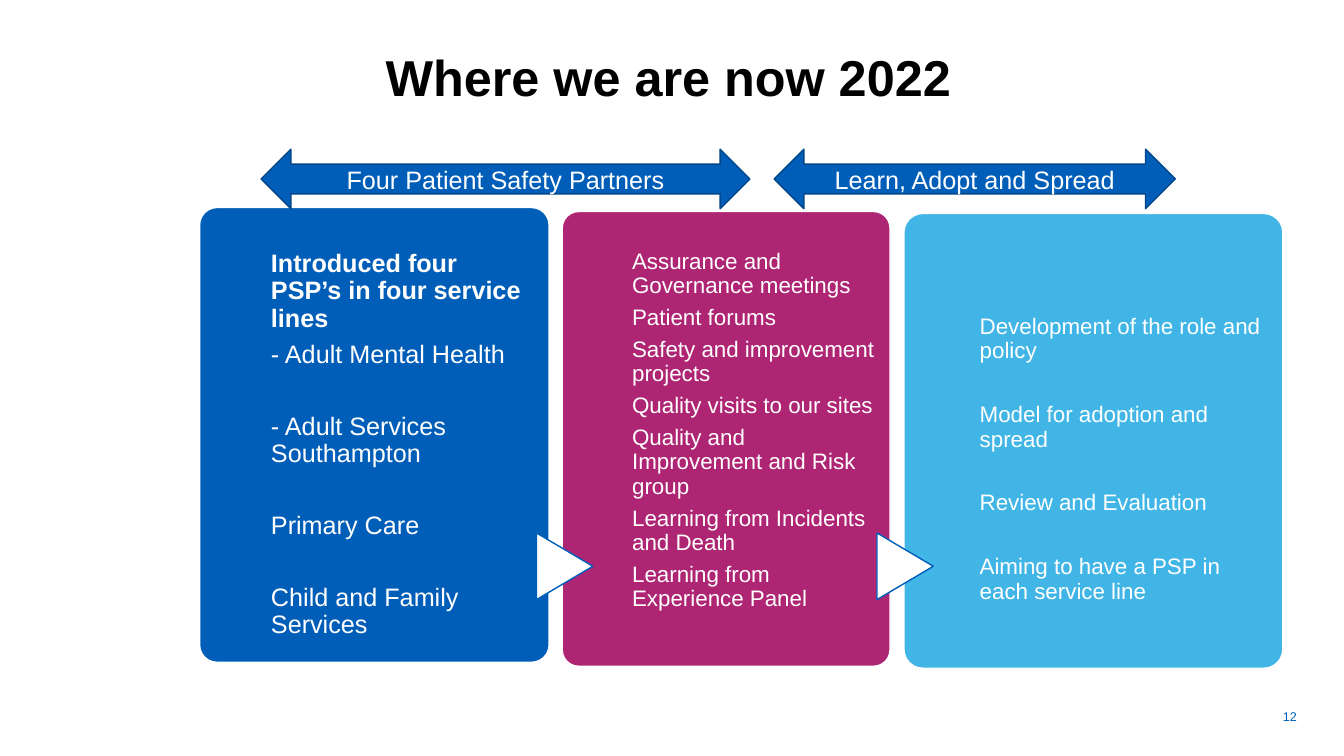
"""Build the slide on patient safety partners in 2022."""
from dataclasses import dataclass

from pptx import Presentation
from pptx.dml.color import RGBColor
from pptx.enum.shapes import MSO_SHAPE
from pptx.enum.text import MSO_ANCHOR, PP_ALIGN
from pptx.util import Cm, Pt

ROUNDED = MSO_SHAPE.ROUNDED_RECTANGLE
TRIANGLE = MSO_SHAPE.FLOWCHART_EXTRACT
DOUBLE_ARROW = MSO_SHAPE.LEFT_RIGHT_ARROW
MIDDLE = MSO_ANCHOR.MIDDLE
CENTER = PP_ALIGN.CENTER
LEFT = PP_ALIGN.LEFT
TITLE_ONLY = 5
FONT = "Arial"
COLORS = {
    "black": "000000",
    "white": "FFFFFF",
    "blue": "005EB8",
    "dark blue": "004688",
    "magenta": "AE2573",
    "sky": "41B6E6",
}
CARD_HEIGHT = 11.46


@dataclass
class Card:
    """Hold the place, colour and text of one column, with lengths in cm."""

    left: float
    top: float
    width: float
    color: str
    text_left: float
    text_width: float
    text_inset: float
    size: int
    gaps: list
    lines: list


CARDS = [
    Card(5.03, 5.23, 8.81, "blue", 6.83, 6.55, 1.09, 18, [0, 6.3, 32, 32, 32], [
        "Introduced four PSP’s in four service lines",
        "- Adult Mental Health",
        "- Adult Services Southampton",
        "Primary Care",
        "Child and Family Services",
    ]),
    Card(14.17, 5.33, 8.26, "magenta", 15.93, 6.15, 0.97, 16, [0] + [5.6] * 6, [
        "Assurance and Governance meetings",
        "Patient forums",
        "Safety and improvement projects",
        "Quality visits to our sites",
        "Quality and Improvement and Risk group",
        "Learning from Incidents and Death",
        "Learning from Experience Panel",
    ]),
    Card(22.78, 5.38, 9.55, "sky", 24.69, 7.11, 2.57, 16, [0] + [28.4] * 3, [
        "Development of the role and policy",
        "Model for adoption and spread",
        "Review and Evaluation",
        "Aiming to have a PSP in each service line",
    ]),
]
TRIANGLE_LEFTS = [13.39, 21.97]
ARROWS = [
    (6.58, 12.32, "Four Patient Safety Partners"),
    (19.51, 10.11, "Learn, Adopt and Spread"),
]


def rgb(name):
    """Return the named colour."""
    return RGBColor.from_string(COLORS[name])


def format_paragraph(paragraph, size, color, bold=False, align=LEFT):
    """Set the font and alignment of a paragraph."""
    paragraph.alignment = align
    for run in paragraph.runs:
        run.font.name = FONT
        run.font.size = Pt(size)
        run.font.bold = bold
        run.font.color.rgb = rgb(color)


def set_insets(text_frame, top=0):
    """Remove the margins of a text frame except the top one."""
    text_frame.margin_left = text_frame.margin_right = text_frame.margin_bottom = 0
    text_frame.margin_top = Cm(top)


def add_box(slide, kind, left, top, width, height, fill, line):
    """Add a filled and outlined preset shape."""
    shape = slide.shapes.add_shape(kind, Cm(left), Cm(top), Cm(width), Cm(height))
    shape.shadow.inherit = False
    shape.fill.solid()
    shape.fill.fore_color.rgb = rgb(fill)
    shape.line.color.rgb = rgb(line)
    shape.line.width = Pt(1)
    return shape


def add_text(slide, left, top, width, height, lines, inset=0):
    """Add a wrapping text box with one paragraph per line."""
    box = slide.shapes.add_textbox(Cm(left), Cm(top), Cm(width), Cm(height))
    text_frame = box.text_frame
    text_frame.word_wrap = True
    set_insets(text_frame, inset)
    text_frame.text = "\n".join(lines)
    return text_frame.paragraphs


def add_title(slide, text):
    """Place and format the title placeholder."""
    title = slide.shapes.title
    title.left, title.top, title.width, title.height = Cm(4.93), Cm(0.94), Cm(23.83), Cm(2.16)
    text_frame = title.text_frame
    text_frame.text = text
    text_frame.vertical_anchor = MIDDLE
    set_insets(text_frame)
    text_frame.paragraphs[0].line_spacing = 0.9
    format_paragraph(text_frame.paragraphs[0], 36, "black", True, CENTER)


def add_card(slide, card):
    """Add a rounded column and its text."""
    shape = add_box(slide, ROUNDED, card.left, card.top, card.width, CARD_HEIGHT,
                    card.color, "white")
    shape.adjustments[0] = 0.05
    paragraphs = add_text(slide, card.text_left, card.top, card.text_width, CARD_HEIGHT,
                          card.lines, card.text_inset)
    for paragraph, gap in zip(paragraphs, card.gaps):
        paragraph.line_spacing = 0.9
        paragraph.space_before = Pt(gap)
        format_paragraph(paragraph, card.size, "white")


def add_triangle(slide, left):
    """Add a triangle that points to the next column."""
    triangle = add_box(slide, TRIANGLE, left, 13.56, 1.68, 1.42, "white", "blue")
    triangle.rotation = 90


def add_arrow(slide, left, width, text):
    """Add a labelled double arrow above the columns."""
    arrow = add_box(slide, DOUBLE_ARROW, left, 3.76, width, 1.5, "blue", "dark blue")
    arrow.text_frame.text = text
    arrow.text_frame.word_wrap = True
    arrow.text_frame.vertical_anchor = MIDDLE
    format_paragraph(arrow.text_frame.paragraphs[0], 18, "white", align=CENTER)


def main():
    """Build and save the presentation."""
    presentation = Presentation()
    presentation.slide_width, presentation.slide_height = Cm(33.87), Cm(19.05)
    slide = presentation.slides.add_slide(presentation.slide_layouts[TITLE_ONLY])
    add_title(slide, "Where we are now 2022")
    for card in CARDS:
        add_card(slide, card)
    heading = slide.shapes[2].text_frame.paragraphs[0]
    format_paragraph(heading, CARDS[0].size, "white", bold=True)
    for left in TRIANGLE_LEFTS:
        add_triangle(slide, left)
    for left, width, text in ARROWS:
        add_arrow(slide, left, width, text)
    number = add_text(slide, 32.33, 17.86, 0.61, 0.38, ["12"])
    format_paragraph(number[0], 9, "blue")
    presentation.save("out.pptx")


if __name__ == "__main__":
    main()
